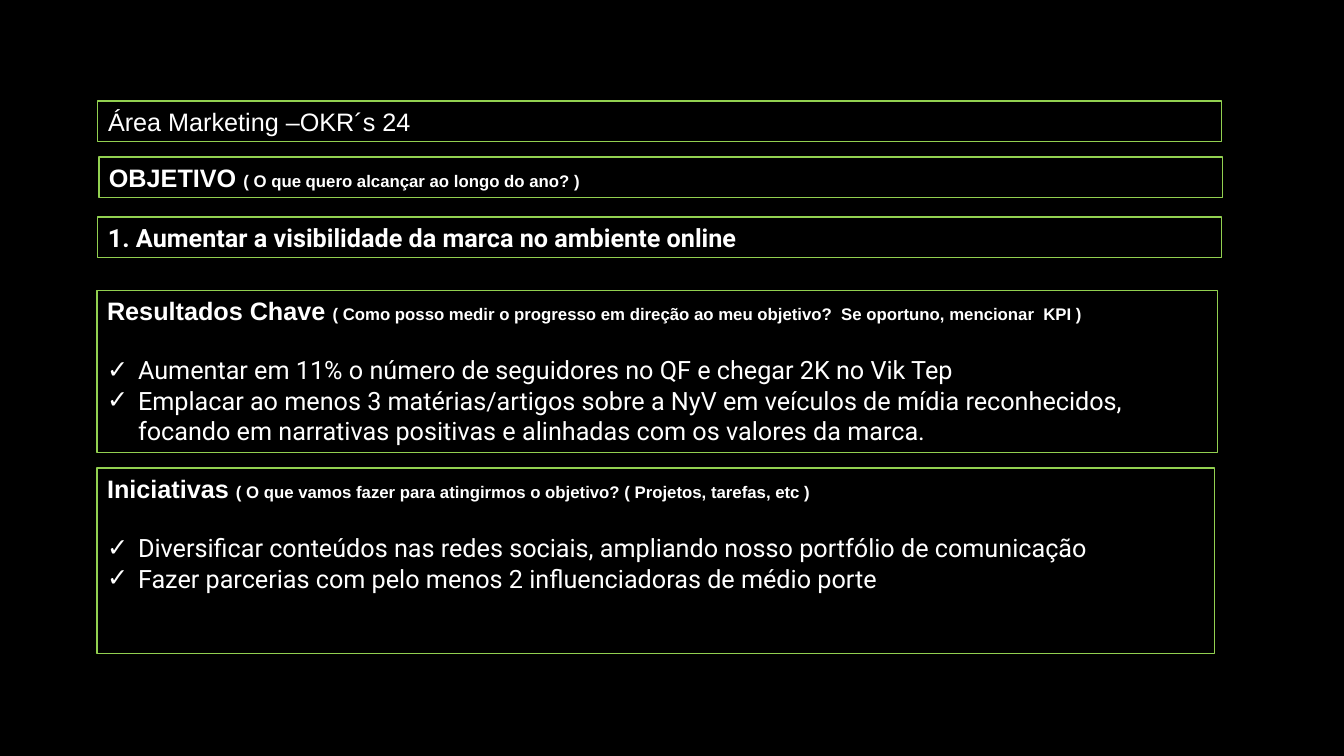
from dataclasses import dataclass

from lxml import etree
from pptx import Presentation
from pptx.dml.color import RGBColor
from pptx.enum.shapes import MSO_SHAPE
from pptx.enum.text import MSO_ANCHOR, MSO_AUTO_SIZE, PP_ALIGN
from pptx.oxml.ns import qn
from pptx.util import Emu, Pt

RECTANGLE = MSO_SHAPE.RECTANGLE
TOP = MSO_ANCHOR.TOP
NO_AUTO_SIZE = MSO_AUTO_SIZE.NONE
LEFT = PP_ALIGN.LEFT

EMU_PER_PX = 914400 / 100.8
SLIDE_WIDTH, SLIDE_HEIGHT = 1344, 756
BULLET_INDENT = 31
TWO_CONTENT_LAYOUT = 3

BLACK, WHITE, GREEN = "000000", "FFFFFF", "92D050"
HEADING_FONT, LIST_FONT = "Arial", "Roboto"
MAIN_SIZE, HINT_SIZE = 18, 12
LIST_GAP = 21


@dataclass(frozen=True)
class Panel:
    left: int
    top: int
    width: int
    height: int
    heading: str
    hint: str = ""
    items: tuple[str, ...] = ()
    font: str = HEADING_FONT
    bold: bool = True
    placeholder: int | None = None


PANELS = (
    Panel(98, 101, 1124, 41, "Área Marketing –OKR´s 24", bold=False, placeholder=0),
    Panel(99, 157, 1124, 41, "OBJETIVO ", "( O que quero alcançar ao longo do ano? )"),
    Panel(98, 217, 1124, 41, "1. Aumentar a visibilidade da marca no ambiente online",
          font=LIST_FONT),
    Panel(97, 290, 1121, 163, "Resultados Chave ",
          "( Como posso medir o progresso em direção ao meu objetivo?  "
          "Se oportuno, mencionar  KPI )",
          ("Aumentar em 11% o número de seguidores no QF e chegar 2K no Vik Tep",
           "Emplacar ao menos 3 matérias/artigos sobre a NyV em veículos de mídia "
           "reconhecidos, focando em narrativas positivas e alinhadas com os valores "
           "da marca."),
          placeholder=1),
    Panel(97, 468, 1118, 186, "Iniciativas ",
          "( O que vamos fazer para atingirmos o objetivo? ( Projetos, tarefas, etc )",
          ("Diversificar conteúdos nas redes sociais, ampliando nosso portfólio de "
           "comunicação",
           "Fazer parcerias com pelo menos 2 influenciadoras de médio porte"),
          placeholder=2),
)


def px(length: int) -> Emu:
    return Emu(round(length * EMU_PER_PX))


def color(value: str) -> RGBColor:
    return RGBColor.from_string(value)


def add_run(paragraph, text: str, font: str, size: int, bold: bool) -> None:
    run = paragraph.add_run()
    run.text = text
    run.font.name = font
    run.font.size = Pt(size)
    run.font.bold = bold
    run.font.color.rgb = color(WHITE)


def format_paragraph(paragraph, bulleted: bool, gap: int = 0) -> None:
    indent = px(BULLET_INDENT) if bulleted else 0
    properties = paragraph._p.get_or_add_pPr()
    properties.set("marL", str(indent))
    properties.set("indent", str(-indent))
    if bulleted:
        etree.SubElement(properties, qn("a:buFont")).set("typeface", HEADING_FONT)
        etree.SubElement(properties, qn("a:buChar")).set("char", "✓")
    else:
        etree.SubElement(properties, qn("a:buNone"))
    paragraph.alignment = LEFT
    paragraph.space_before = Pt(gap)


def add_panel(slide, panel: Panel) -> None:
    box = [px(length) for length in (panel.left, panel.top, panel.width, panel.height)]
    if panel.placeholder is None:
        shape = slide.shapes.add_shape(RECTANGLE, *box)
        shape.shadow.inherit = False
    else:
        shape = slide.placeholders[panel.placeholder]
        shape.left, shape.top, shape.width, shape.height = box
    shape.fill.background()
    shape.line.color.rgb = color(GREEN)
    shape.line.width = Pt(0.75)

    frame = shape.text_frame
    frame.word_wrap = True
    frame.auto_size = NO_AUTO_SIZE
    frame.vertical_anchor = TOP
    heading = frame.paragraphs[0]
    format_paragraph(heading, bulleted=False)
    add_run(heading, panel.heading, panel.font, MAIN_SIZE, panel.bold)
    if panel.hint:
        add_run(heading, panel.hint, panel.font, HINT_SIZE, panel.bold)
    for index, item in enumerate(panel.items):
        paragraph = frame.add_paragraph()
        format_paragraph(paragraph, bulleted=True, gap=0 if index else LIST_GAP)
        add_run(paragraph, item, LIST_FONT, MAIN_SIZE, False)


def main() -> None:
    presentation = Presentation()
    presentation.slide_width = px(SLIDE_WIDTH)
    presentation.slide_height = px(SLIDE_HEIGHT)
    slide = presentation.slides.add_slide(presentation.slide_layouts[TWO_CONTENT_LAYOUT])
    slide.background.fill.solid()
    slide.background.fill.fore_color.rgb = color(BLACK)
    for panel in PANELS:
        add_panel(slide, panel)
    presentation.save("out.pptx")


if __name__ == "__main__":
    main()
